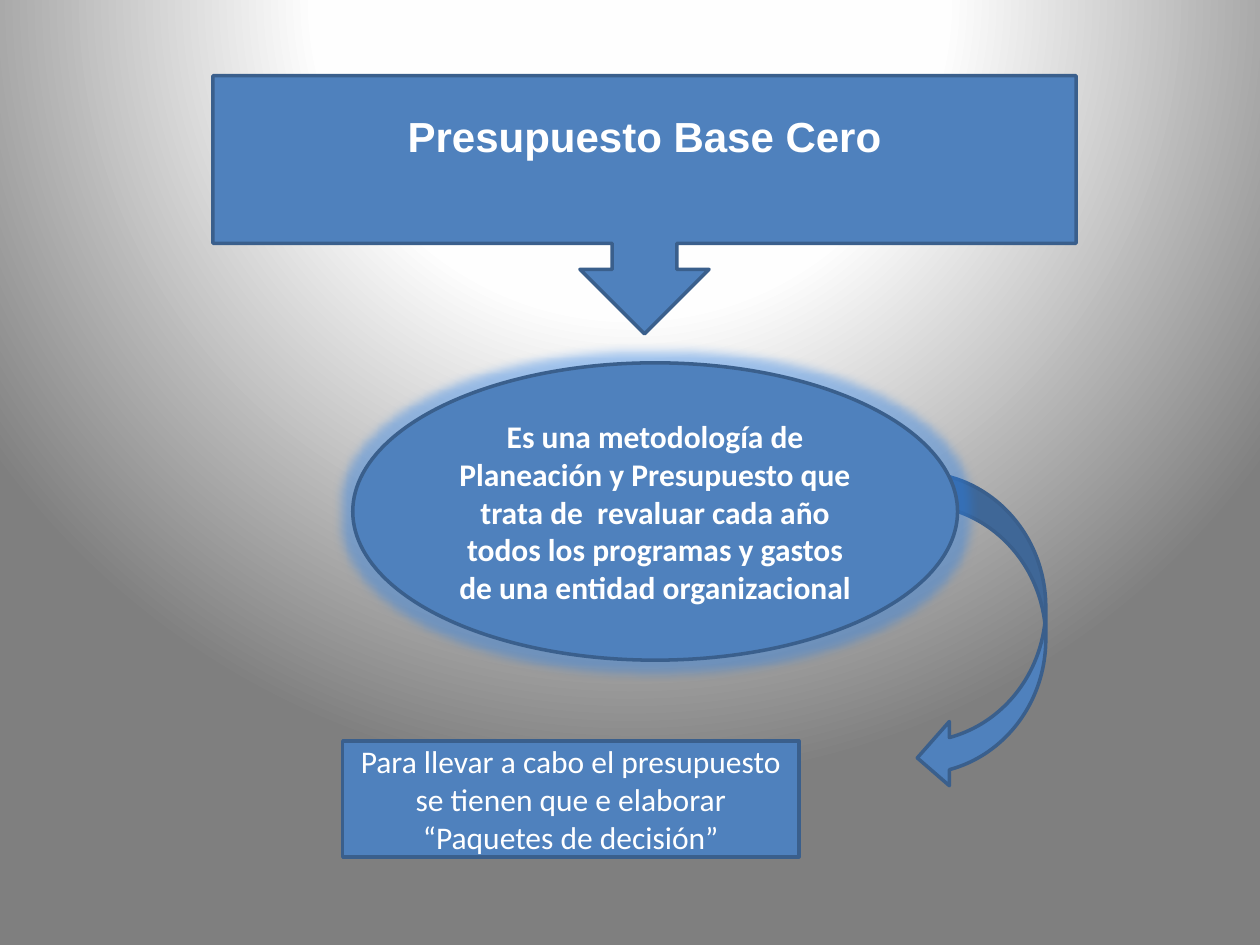
from dataclasses import dataclass

from lxml import etree
from pptx import Presentation
from pptx.dml.color import RGBColor
from pptx.enum.shapes import MSO_SHAPE as Shape
from pptx.enum.text import MSO_ANCHOR as Anchor, PP_ALIGN as Align
from pptx.oxml import parse_xml
from pptx.oxml.ns import nsdecls, qn
from pptx.util import Inches, Pt


@dataclass(frozen=True)
class Theme:
    fill: str = "4F81BD"
    outline: str = "3A5F8C"
    text: str = "FFFFFF"
    background: tuple = ((0, "FFFFFF"), (40, "FEFEFE"), (100, "7F7F7F"))
    title_font: str = "Arial"
    body_font: str = "Calibri"
    title_size: int = 24
    body_size: int = 18
    outline_width: int = 2
    glow_radius: int = 11


theme = Theme()
presentation = Presentation()
presentation.slide_width = Inches(10)
presentation.slide_height = Inches(7.5)
slide = presentation.slides.add_slide(presentation.slide_layouts[6])

# Radial background centred above the slide
stops = "".join(
    f'<a:gs pos="{position * 1000}"><a:srgbClr val="{color}"/></a:gs>'
    for position, color in theme.background
)
background = parse_xml(
    f'<p:bg {nsdecls("p", "a")}><p:bgPr><a:gradFill rotWithShape="1">'
    f'<a:gsLst>{stops}</a:gsLst><a:path path="circle">'
    '<a:fillToRect l="50000" t="-80000" r="50000" b="180000"/></a:path>'
    "</a:gradFill><a:effectLst/></p:bgPr></p:bg>"
)
slide.element.cSld.insert(0, background)


def add_block(kind, left, top, width, height, text="", font=theme.body_font,
              size=theme.body_size, bold=False):
    shape = slide.shapes.add_shape(
        kind, Inches(left), Inches(top), Inches(width), Inches(height))
    shape.shadow.inherit = False
    shape.fill.solid()
    shape.fill.fore_color.rgb = RGBColor.from_string(theme.fill)
    shape.line.color.rgb = RGBColor.from_string(theme.outline)
    shape.line.width = Pt(theme.outline_width)
    if text:
        frame = shape.text_frame
        frame.text = text
        frame.word_wrap = True
        frame.vertical_anchor = Anchor.MIDDLE
        paragraph = frame.paragraphs[0]
        paragraph.alignment = Align.CENTER
        run_font = paragraph.runs[0].font
        run_font.name, run_font.size, run_font.bold = font, Pt(size), bold
        run_font.color.rgb = RGBColor.from_string(theme.text)
    return shape


add_block(Shape.CURVED_LEFT_ARROW, 7.28, 3.75, 1.02, 2.52)

title = add_block(Shape.DOWN_ARROW_CALLOUT, 1.69, 0.6, 6.85, 2.05,
                  "Presupuesto Base Cero", theme.title_font, theme.title_size, True)
title.text_frame.margin_bottom = Inches(0.43)  # lifts the title above the middle

definition = add_block(
    Shape.OVAL, 2.8, 2.88, 4.8, 2.36,
    "Es una metodología de Planeación y Presupuesto que trata de  revaluar cada año "
    "todos los programas y gastos de una entidad organizacional", bold=True)
effects = definition.element.spPr.find(qn("a:effectLst"))
glow = etree.SubElement(effects, qn("a:glow"), rad=str(Pt(theme.glow_radius)))
glow_color = etree.SubElement(glow, qn("a:srgbClr"), val=theme.fill)
etree.SubElement(glow_color, qn("a:satMod"), val="175000")
etree.SubElement(glow_color, qn("a:alpha"), val="40000")

add_block(Shape.RECTANGLE, 2.72, 5.88, 3.62, 0.92,
          "Para llevar a cabo el presupuesto se tienen que e elaborar "
          "“Paquetes de decisión”")

presentation.save("out.pptx")
